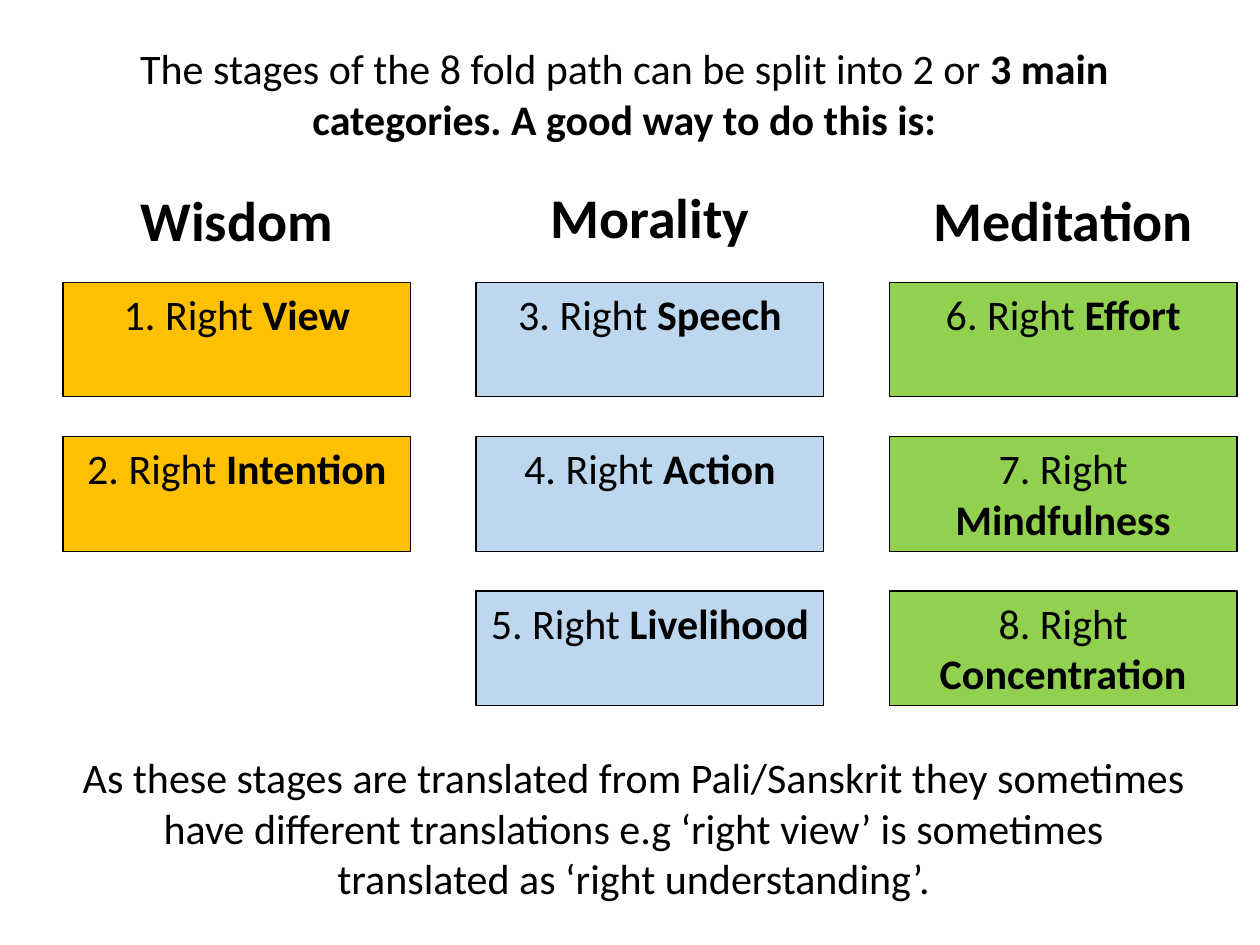
from pptx import Presentation
from pptx import util as u
from pptx.dml.color import RGBColor
from pptx.enum import shapes, text


def colour(value):
    return RGBColor.from_string(value)


class SlideBuilder:
    """Hold the text style and the slide that elements are added to."""

    font = "Calibri"
    ink = "000000"

    def __init__(self, slide):
        self.slide = slide

    def add_words(self, shape, plain, bold, size):
        frame = shape.text_frame
        frame.word_wrap = True
        frame.vertical_anchor = text.MSO_ANCHOR.TOP
        paragraph = frame.paragraphs[0]
        paragraph.alignment = text.PP_ALIGN.CENTER
        for content, is_bold in ((plain, False), (bold, True)):
            if content:
                run = paragraph.add_run()
                run.text = content
                run.font.name = self.font
                run.font.size = u.Pt(size)
                run.font.bold = is_bold
                run.font.color.rgb = colour(self.ink)

    def label(self, left, top, width, height, plain="", bold="", size=24):
        box = self.slide.shapes.add_textbox(
            u.Pt(left), u.Pt(top), u.Pt(width), u.Pt(height))
        self.add_words(box, plain, bold, size)

    def card(self, left, top, width, height, fill, plain, bold):
        shape = self.slide.shapes.add_shape(
            shapes.MSO_SHAPE.RECTANGLE,
            u.Pt(left), u.Pt(top), u.Pt(width), u.Pt(height))
        shape.shadow.inherit = False
        shape.fill.solid()
        shape.fill.fore_color.rgb = colour(fill)
        shape.line.color.rgb = colour(self.ink)
        shape.line.width = u.Pt(0.75)
        self.add_words(shape, plain, bold, 24)


CATEGORIES = [
    ("Wisdom", 102.4, "FFC000", ["View", "Intention"]),
    ("Morality", 100.8, "BDD7EE", ["Speech", "Action", "Livelihood"]),
    ("Meditation", 102.6, "92D050", ["Effort", "Mindfulness", "Concentration"]),
]
LEFT, TOP = 36, 161.3
WIDTH, HEIGHT = 198.7, 65.5
COLUMN_STEP, ROW_STEP = 236.1, 88.2


def main():
    presentation = Presentation()
    presentation.slide_width = u.Pt(720)
    presentation.slide_height = u.Pt(540)
    slide = presentation.slides.add_slide(presentation.slide_layouts[6])
    builder = SlideBuilder(slide)

    builder.label(24.5, 20.9, 664.6, HEIGHT,
                  "The stages of the 8 fold path can be split into 2 or ",
                  "3 main categories. A good way to do this is:")
    number = 1
    for column, (title, title_top, fill, stages) in enumerate(CATEGORIES):
        left = LEFT + column * COLUMN_STEP
        builder.label(left, title_top, WIDTH, 46, bold=title, size=32)
        for row, stage in enumerate(stages):
            builder.card(left, TOP + row * ROW_STEP, WIDTH, HEIGHT, fill,
                         f"{number}. Right ", stage)
            number += 1
    builder.label(LEFT, 426.2, 652.3, 94.5,
                  "As these stages are translated from Pali/Sanskrit they "
                  "sometimes have different translations e.g ‘right view’ is "
                  "sometimes translated as ‘right understanding’.")
    presentation.save("out.pptx")


if __name__ == "__main__":
    main()
